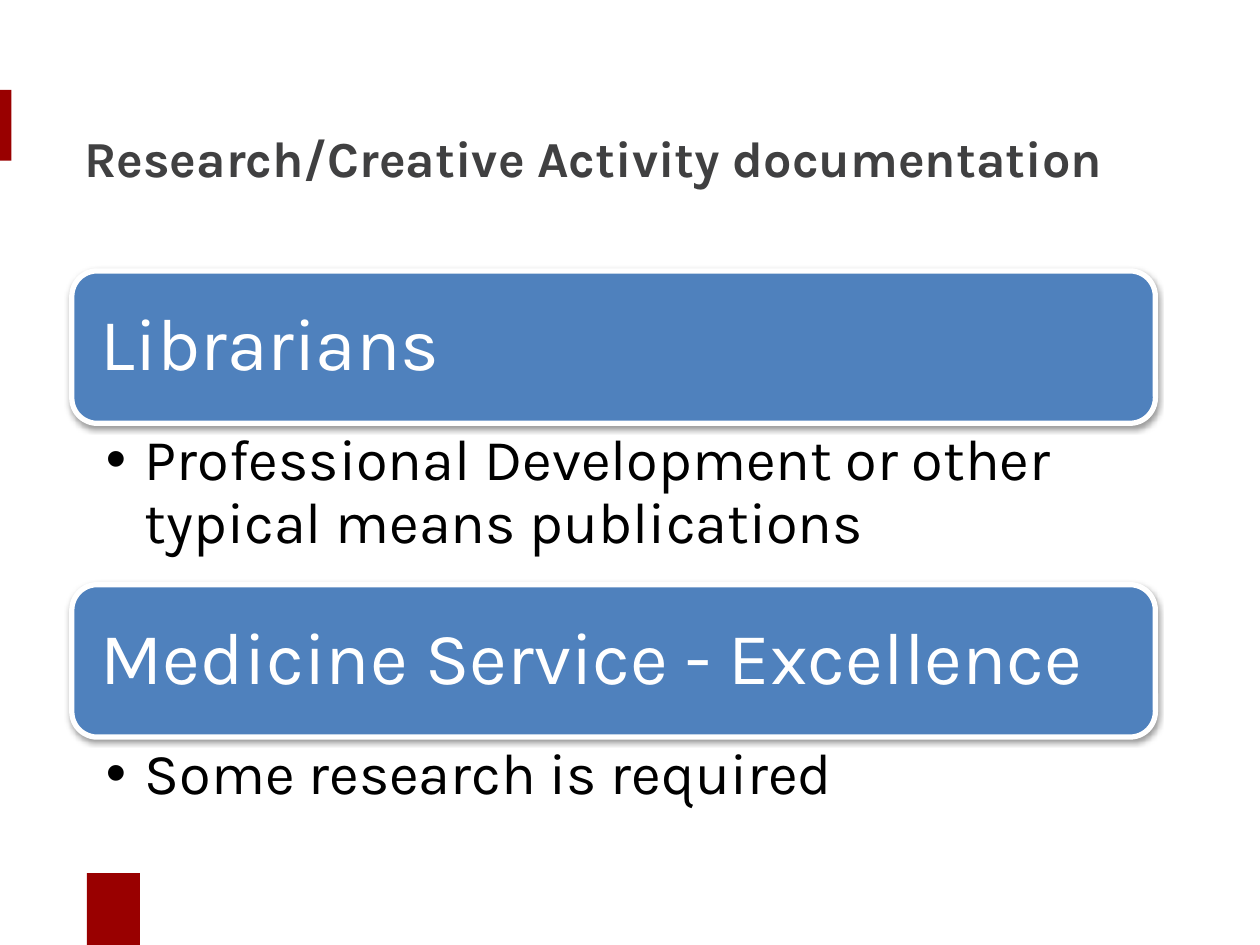
from collections import namedtuple

from lxml.etree import SubElement
from pptx import Presentation
from pptx.dml.color import RGBColor
from pptx.enum.shapes import MSO_SHAPE as Shape
from pptx.enum.text import MSO_ANCHOR as Anchor, PP_ALIGN as Align
from pptx.oxml.ns import qn
from pptx.util import Inches, Pt

Box = namedtuple("Box", "left top width height")
PAGE = Box(0, 0, 10, 7.5)
COLORS = {
    "accent": "990000",
    "title": "404041",
    "banner": "4F81BD",
    "light": "FFFFFF",
    "dark": "000000",
}
TITLE = {"size": Pt(28.8), "bold": True}
HEADING = {"size": Pt(42)}
DETAIL = {"size": Pt(33)}
SECTIONS = [
    ("Librarians", "Professional Development or other typical means publications", 1.28),
    ("Medicine Service - Excellence", "Some research is required", 0.76),
]
BANNER_HEIGHT = 1.21
BANNER_INSET = 0.06


def color(name):
    return RGBColor.from_string(COLORS[name])


def share(box, left, top, width, height):
    return Box(box.left + left * box.width, box.top + top * box.height,
               width * box.width, height * box.height)


def add_block(slide, kind, box, fill):
    block = slide.shapes.add_shape(kind, *map(Inches, box))
    block.shadow.inherit = False
    block.fill.solid()
    block.fill.fore_color.rgb = color(fill)
    block.line.fill.background()
    return block


def add_text(slide, box, text, tint, font_format, margins, anchor, spacing=1.0):
    frame = slide.shapes.add_textbox(*map(Inches, box)).text_frame
    left, top, right, bottom = map(Inches, margins)
    frame_format = {
        "word_wrap": True, "vertical_anchor": anchor,
        "margin_left": left, "margin_top": top,
        "margin_right": right, "margin_bottom": bottom,
    }
    for name, value in frame_format.items():
        setattr(frame, name, value)
    paragraph = frame.paragraphs[0]
    paragraph.alignment = Align.LEFT
    paragraph.line_spacing = spacing
    run = paragraph.add_run()
    run.text = text
    for name, value in {"name": "Karla", **font_format}.items():
        setattr(run.font, name, value)
    run.font.color.rgb = color(tint)
    return paragraph


def add_bullet(paragraph, indent):
    props = paragraph._p.get_or_add_pPr()
    props.set("marL", str(Inches(indent)))
    props.set("indent", str(-Inches(indent)))
    SubElement(props, qn("a:buFont"), typeface="Arial")
    SubElement(props, qn("a:buChar"), char="•")


def add_soft_shadow(block):
    effects = block._element.spPr.find(qn("a:effectLst"))
    shadow = SubElement(effects, qn("a:outerShdw"), blurRad=str(Pt(3.1)),
                        dist=str(Pt(1.6)), dir="5400000", rotWithShape="0")
    tint = SubElement(shadow, qn("a:srgbClr"), val=COLORS["dark"])
    SubElement(tint, qn("a:alpha"), val="38000")


def draw_accents(slide, box):
    for part in [(0, 0.095, 0.009, 0.075), (0.069, 0.924, 0.042, 0.076)]:
        add_block(slide, Shape.RECTANGLE, share(box, *part), "accent")


def draw_title(slide, box):
    add_text(slide, box, "Research/Creative Activity documentation", "title",
             TITLE, (0.1, 0.05, 0.1, 0.05), Anchor.MIDDLE)


def draw_section(slide, box, heading, detail):
    banner_box = box._replace(height=BANNER_HEIGHT)
    banner = add_block(slide, Shape.ROUNDED_RECTANGLE, banner_box, "banner")
    banner.line.color.rgb = color("light")
    banner.line.width = Pt(3)
    add_soft_shadow(banner)

    heading_box = Box(box.left + BANNER_INSET, box.top + BANNER_INSET,
                      box.width - 2 * BANNER_INSET, BANNER_HEIGHT - 2 * BANNER_INSET)
    add_text(slide, heading_box, heading, "light", HEADING,
             (0.17,) * 4, Anchor.MIDDLE, 0.9)

    detail_box = box._replace(top=box.top + BANNER_HEIGHT,
                              height=box.height - BANNER_HEIGHT)
    paragraph = add_text(slide, detail_box, detail, "dark", DETAIL,
                         (0.27, 0.06, 0.33, 0.06), Anchor.TOP, 0.9)
    add_bullet(paragraph, 0.31)


def draw_sections(slide, box):
    top = box.top
    for heading, detail, detail_height in SECTIONS:
        height = BANNER_HEIGHT + detail_height
        draw_section(slide, box._replace(top=top, height=height), heading, detail)
        top += height


def main():
    deck = Presentation()
    deck.slide_width, deck.slide_height = Inches(PAGE.width), Inches(PAGE.height)
    slide = deck.slides.add_slide(deck.slide_layouts[6])
    slide.background.fill.solid()
    slide.background.fill.fore_color.rgb = color("light")
    draw_accents(slide, PAGE)
    draw_title(slide, Box(0.57, 0.68, 8.74, 1.14))
    draw_sections(slide, Box(0.57, 2.15, 8.6, 4.46))
    deck.save("out.pptx")


if __name__ == "__main__":
    main()
